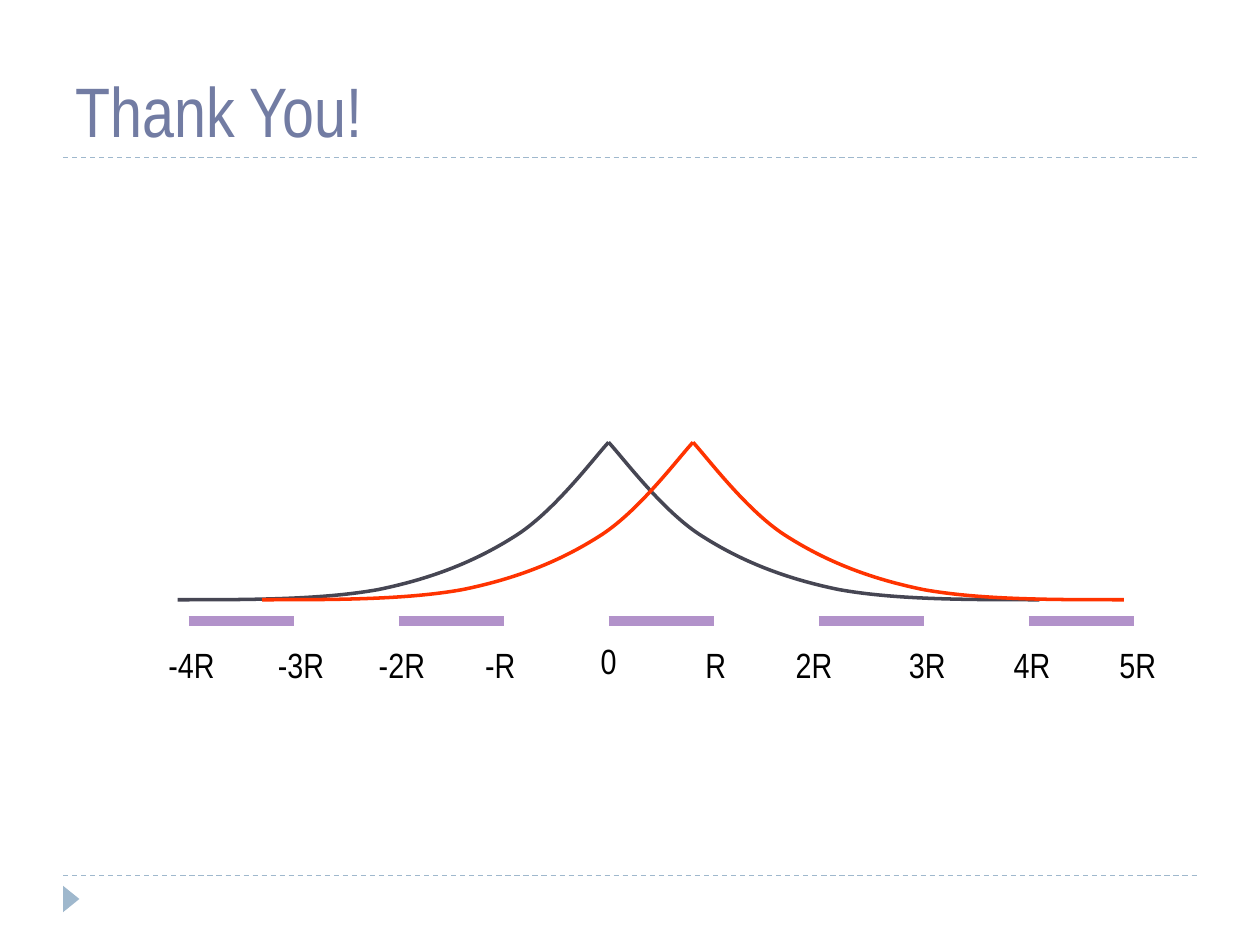
from typing import NamedTuple

from lxml import etree
from pptx import Presentation
from pptx.dml.color import RGBColor
from pptx.enum.dml import MSO_LINE
from pptx.enum.shapes import MSO_CONNECTOR, MSO_SHAPE
from pptx.enum.text import MSO_ANCHOR, MSO_AUTO_SIZE, PP_ALIGN
from pptx.oxml.ns import qn
from pptx.util import Inches, Pt

DASH = MSO_LINE.DASH
STRAIGHT = MSO_CONNECTOR.STRAIGHT
TRIANGLE = MSO_SHAPE.ISOSCELES_TRIANGLE
BOTTOM, TOP = MSO_ANCHOR.BOTTOM, MSO_ANCHOR.TOP
LEFT, CENTER = PP_ALIGN.LEFT, PP_ALIGN.CENTER
FIT, FIXED = MSO_AUTO_SIZE.SHAPE_TO_FIT_TEXT, MSO_AUTO_SIZE.NONE

FONT = "Arial Narrow"
COLORS = {
    "title": "727CA3",
    "rule": "9FB8CD",
    "dark": "464653",
    "red": "FF3300",
    "bar": "B292CA",
    "text": "000000",
}

# Axis: the zero mark and the length of one R
ZERO, UNIT = 4.83, 2.5 / 3
AXIS_Y = 4.93

# Half a bell, from tail to peak: distance from the peak and height on the slide
HALF = [
    (3.42, 4.76),
    (2.85, 4.76), (2.28, 4.76), (1.83, 4.68),
    (1.39, 4.59), (1.05, 4.45), (0.75, 4.26),
    (0.44, 4.07), (0.12, 3.64), (0, 3.51),
]


class Bell(NamedTuple):
    peak: float
    color: str


class Label(NamedTuple):
    text: str
    mid: float
    top: float = 5.06
    width: float = 0.5


BELLS = [Bell(ZERO, "dark"), Bell(5.5, "red")]
LABELS = [
    Label("-4R", 1.52, width=0.57),
    Label("-3R", 2.39, width=0.57),
    Label("-2R", 3.19, width=0.57),
    Label("-R", 3.97, width=0.45),
    Label("0", ZERO, 5.03, 0.37),
    Label("R", 5.68, width=0.37),
    Label("2R", 6.46),
    Label("3R", 7.36),
    Label("4R", 8.19),
    Label("5R", 9.03),
]


def rgb(name: str) -> RGBColor:
    return RGBColor.from_string(COLORS[name])


def add_line(slide, left: float, right: float, y: float, color: str, width: float):
    line = slide.shapes.add_connector(
        STRAIGHT, Inches(left), Inches(y), Inches(right), Inches(y))
    line.line.color.rgb = rgb(color)
    line.line.width = Pt(width)
    etree.SubElement(line.element.spPr, qn("a:effectLst"))
    return line


def add_half(slide, bell: Bell, side: int) -> None:
    points = [(Inches(bell.peak + side * x), Inches(y)) for x, y in HALF]
    pen = slide.shapes.build_freeform(*points[0])
    pen.add_line_segments(points[1:], close=False)
    shape = pen.convert_to_shape()
    shape.shadow.inherit = False
    shape.fill.background()
    shape.line.color.rgb = rgb(bell.color)
    shape.line.width = Pt(2)
    # Turn each three straight steps into one Bezier curve
    route = shape.element.find(".//" + qn("a:path"))
    steps = route.findall(qn("a:lnTo"))
    for i in range(0, len(steps), 3):
        curve = etree.SubElement(route, qn("a:cubicBezTo"))
        for step in steps[i:i + 3]:
            curve.append(step[0])
            route.remove(step)


def add_text(slide, text: str, left: float, top: float, width: float, height: float,
             size: int, color: str, align=LEFT, anchor=TOP, wrap: bool = True) -> None:
    box = slide.shapes.add_textbox(
        Inches(left), Inches(top), Inches(width), Inches(height))
    frame = box.text_frame
    frame.word_wrap = wrap
    frame.auto_size = FIXED if wrap else FIT
    frame.vertical_anchor = anchor
    para = frame.paragraphs[0]
    para.alignment = align
    run = para.add_run()
    run.text = text
    run.font.name = FONT
    run.font.size = Pt(size)
    run.font.color.rgb = rgb(color)


def main() -> None:
    deck = Presentation()
    deck.slide_width, deck.slide_height = Inches(10), Inches(7.5)
    slide = deck.slides.add_slide(deck.slide_layouts[6])

    # Dashed rules and corner mark
    for y in (6.95, 1.25):
        add_line(slide, 0.5, 9.5, y, "rule", 0.75).line.dash_style = DASH
    mark = slide.shapes.add_shape(
        TRIANGLE, Inches(0.46), Inches(7.07), Inches(0.21), Inches(0.13))
    mark.rotation = 90
    mark.shadow.inherit = False
    mark.fill.solid()
    mark.fill.fore_color.rgb = rgb("rule")
    mark.line.fill.background()

    # Bell curves
    for bell in BELLS:
        for side in (-1, 1):
            add_half(slide, bell, side)

    # Every second unit of the axis
    for step in range(-4, 5, 2):
        left = ZERO + step * UNIT
        add_line(slide, left, left + UNIT, AXIS_Y, "bar", 6)

    # Axis labels
    for label in LABELS:
        add_text(slide, label.text, label.mid - label.width / 2, label.top,
                 label.width, 0.44, 20, "text", CENTER, wrap=False)

    # Title
    add_text(slide, "Thank You!", 0.5, 0.17, 9, 1.08, 40, "title", anchor=BOTTOM)

    deck.save("out.pptx")


if __name__ == "__main__":
    main()
